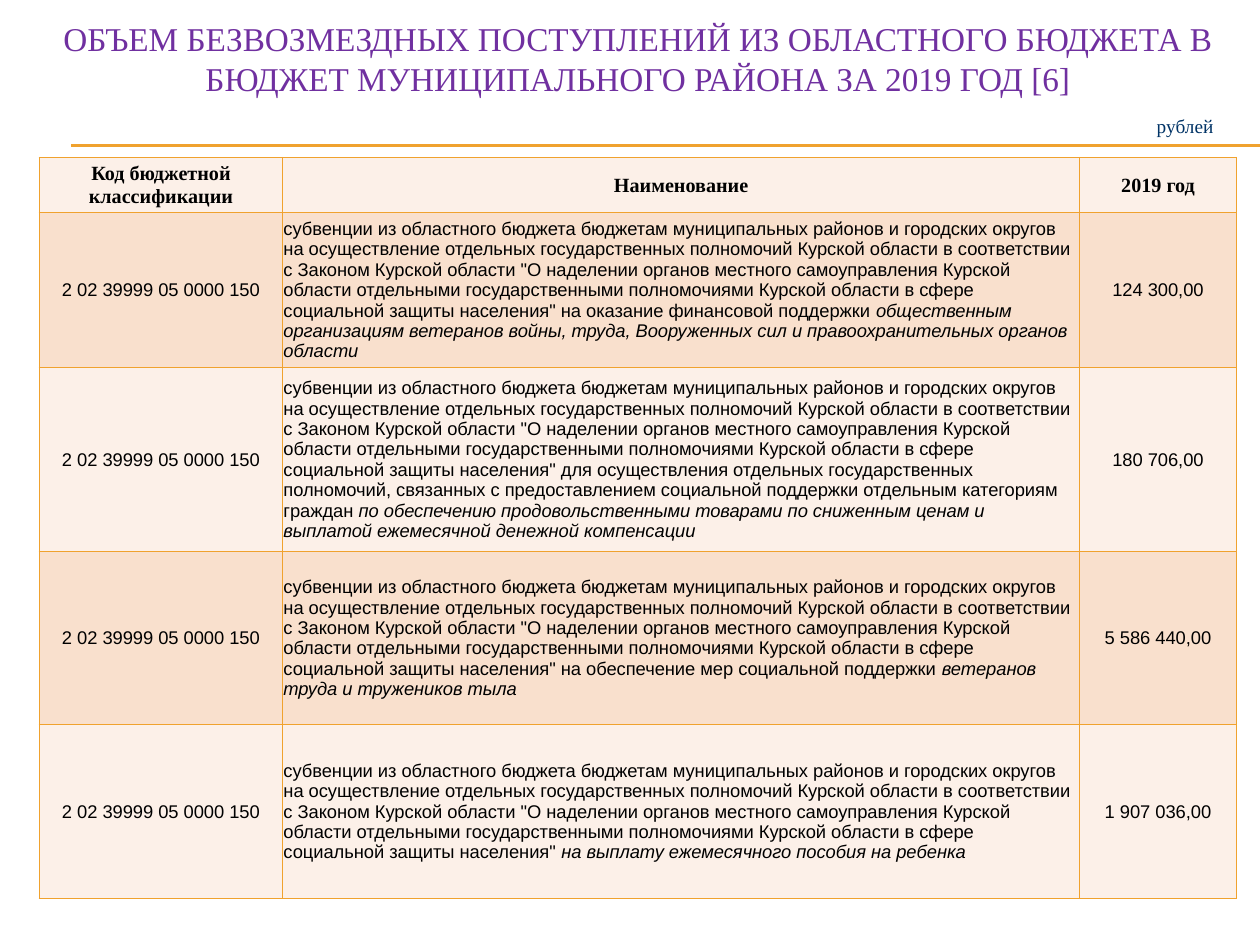
from dataclasses import dataclass

from lxml.etree import SubElement
from pptx import Presentation
from pptx.dml.color import RGBColor
from pptx.enum.shapes import MSO_CONNECTOR
from pptx.enum.text import MSO_ANCHOR, PP_ALIGN
from pptx.oxml.ns import qn
from pptx.util import Pt

COLORS = {
    "title": "7030A0",
    "unit": "003366",
    "rule": "F0A22E",
    "text": "000000",
    "light": "FCF0E8",
    "dark": "F9E0CD",
}
SERIF, SANS = "Times New Roman", "Arial"

BUDGET_CODE = "2 02 39999 05 0000 150"
SUBVENTION = (
    "субвенции из областного бюджета бюджетам муниципальных районов и городских округов "
    "на осуществление отдельных государственных полномочий Курской области в соответствии "
    "с Законом Курской области \"О наделении органов местного самоуправления Курской "
    "области отдельными государственными полномочиями Курской области в сфере "
    "социальной защиты населения\""
)


@dataclass
class Span:
    text: str
    size: float = 10.5
    font: str = SANS
    color: str = "text"
    bold: bool = False
    italic: bool = False


@dataclass
class Transfer:
    purpose: str
    recipients: str
    amount: str


HEADINGS = ["Код бюджетной классификации", "Наименование", "2019 год"]
TRANSFERS = [
    Transfer(
        " на оказание финансовой поддержки ",
        "общественным организациям ветеранов войны, труда, Вооруженных сил "
        "и правоохранительных органов области",
        "124 300,00",
    ),
    Transfer(
        " для осуществления отдельных государственных полномочий, связанных с "
        "предоставлением социальной поддержки отдельным категориям граждан ",
        "по обеспечению продовольственными товарами по сниженным ценам "
        "и выплатой ежемесячной денежной компенсации",
        "180 706,00",
    ),
    Transfer(
        " на обеспечение мер социальной поддержки ",
        "ветеранов труда и тружеников тыла",
        "5 586 440,00",
    ),
    Transfer("", " на выплату ежемесячного пособия на ребенка", "1 907 036,00"),
]
COLUMN_WIDTHS = [139, 455.5, 89.5]
ROW_HEIGHTS = [31.4, 88.6, 105.1, 98.9, 99.4]


def rgb(name: str) -> RGBColor:
    return RGBColor.from_string(COLORS[name])


def write(frame, spans: list[Span], align: PP_ALIGN) -> None:
    para = frame.paragraphs[0]
    para.alignment = align
    for span in spans:
        run = para.add_run()
        run.text = span.text
        run.font.size = Pt(span.size)
        run.font.name = span.font
        run.font.bold = span.bold
        run.font.italic = span.italic
        run.font.color.rgb = rgb(span.color)


def add_rule(page, y: float) -> None:
    line = page.shapes.add_connector(
        MSO_CONNECTOR.STRAIGHT, Pt(40.5), Pt(y), Pt(720), Pt(y))
    line.line.color.rgb = rgb("rule")
    line.line.width = Pt(0.75)
    SubElement(line._element.spPr, qn("a:effectLst"))


def set_borders(cell) -> None:
    properties = cell._tc.get_or_add_tcPr()
    for index, side in enumerate(("lnL", "lnR", "lnT", "lnB")):
        border = properties.makeelement(qn(f"a:{side}"), {"w": str(Pt(1))})
        fill = SubElement(border, qn("a:solidFill"))
        SubElement(fill, qn("a:srgbClr"), val=COLORS["rule"])
        properties.insert(index, border)


def fill_cell(cell, spans: list[Span], align: PP_ALIGN, color: str) -> None:
    cell.margin_left = cell.margin_right = cell.margin_top = Pt(0.5)
    cell.margin_bottom = Pt(0)
    cell.vertical_anchor = MSO_ANCHOR.MIDDLE
    cell.fill.solid()
    cell.fill.fore_color.rgb = rgb(color)
    set_borders(cell)
    write(cell.text_frame, spans, align)


def transfer_row(transfer: Transfer) -> list[list[Span]]:
    return [
        [Span(BUDGET_CODE)],
        [Span(SUBVENTION + transfer.purpose), Span(transfer.recipients, italic=True)],
        [Span(transfer.amount)],
    ]


def add_transfer_table(page) -> None:
    rows = [[[Span(heading, 11.5, SERIF, bold=True)] for heading in HEADINGS]]
    rows += [transfer_row(transfer) for transfer in TRANSFERS]
    table = page.shapes.add_table(
        len(rows), len(HEADINGS), Pt(22.5), Pt(90),
        Pt(sum(COLUMN_WIDTHS)), Pt(sum(ROW_HEIGHTS))).table
    for column, width in zip(table.columns, COLUMN_WIDTHS):
        column.width = Pt(width)
    for r, (row, height) in enumerate(zip(rows, ROW_HEIGHTS)):
        table.rows[r].height = Pt(height)
        for c, spans in enumerate(row):
            align = PP_ALIGN.LEFT if r and c == 1 else PP_ALIGN.CENTER
            fill_cell(table.cell(r, c), spans, align, "dark" if r % 2 else "light")


def add_title(page) -> None:
    title = page.shapes.title
    title.left, title.top, title.width, title.height = Pt(22.5), Pt(0), Pt(684), Pt(66.5)
    title.text_frame.vertical_anchor = MSO_ANCHOR.MIDDLE
    write(title.text_frame, [Span(
        "ОБЪЕМ БЕЗВОЗМЕЗДНЫХ ПОСТУПЛЕНИЙ ИЗ ОБЛАСТНОГО БЮДЖЕТА В "
        "БЮДЖЕТ МУНИЦИПАЛЬНОГО РАЙОНА ЗА 2019 ГОД [6]",
        19, SERIF, "title")], PP_ALIGN.CENTER)


def add_unit_label(page) -> None:
    box = page.shapes.add_textbox(Pt(653), Pt(62), Pt(47.5), Pt(21))
    box.text_frame.word_wrap = False
    write(box.text_frame, [Span("рублей", 11, SERIF, "unit")], PP_ALIGN.RIGHT)


def main() -> None:
    deck = Presentation()
    deck.slide_width, deck.slide_height = Pt(720), Pt(540)
    page = deck.slides.add_slide(deck.slide_layouts[5])
    for y in (82.8, 83.4):
        add_rule(page, y)
    add_title(page)
    add_transfer_table(page)
    add_unit_label(page)
    deck.save("out.pptx")


if __name__ == "__main__":
    main()
